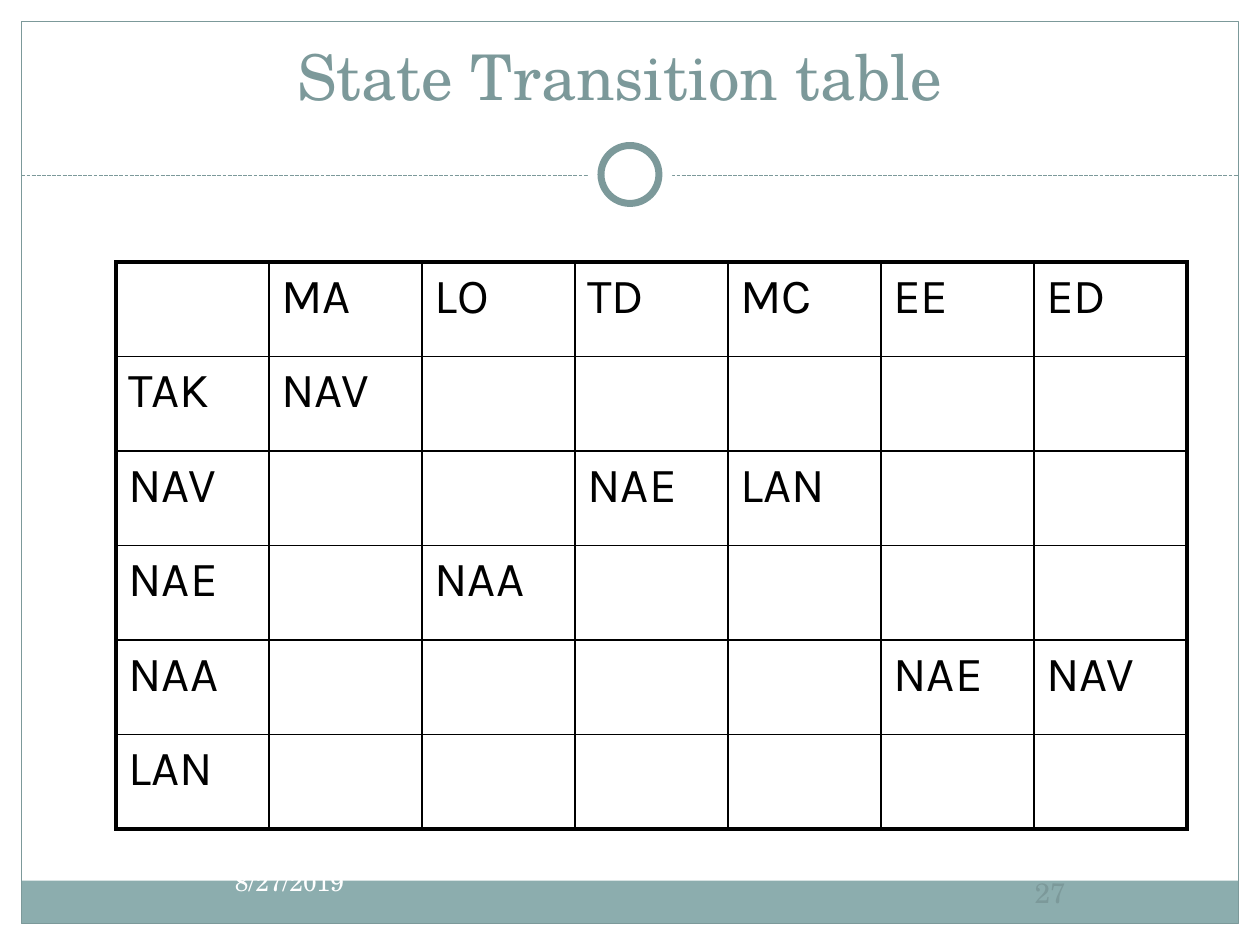
from lxml import etree
from pptx import Presentation
from pptx.dml.color import RGBColor
from pptx.enum.dml import MSO_LINE
from pptx.enum.shapes import MSO_CONNECTOR, MSO_SHAPE
from pptx.enum.text import MSO_ANCHOR, PP_ALIGN
from pptx.oxml.ns import qn
from pptx.util import Emu, Inches, Pt

RECTANGLE, OVAL = MSO_SHAPE.RECTANGLE, MSO_SHAPE.OVAL
STRAIGHT = MSO_CONNECTOR.STRAIGHT
DASHED = MSO_LINE.SQUARE_DOT
TOP, MIDDLE = MSO_ANCHOR.TOP, MSO_ANCHOR.MIDDLE
LEFT, CENTER, RIGHT = PP_ALIGN.LEFT, PP_ALIGN.CENTER, PP_ALIGN.RIGHT

WHITE = RGBColor(0xFF, 0xFF, 0xFF)
BLACK = RGBColor(0, 0, 0)
TEAL = RGBColor(0x7C, 0x99, 0x9A)
LIGHT_TEAL = RGBColor(0x8C, 0xAD, 0xAE)
SERIF = "TeX Gyre Schola"
SANS = "Karla"

EVENTS = ["MA", "LO", "TD", "MC", "EE", "ED"]
TRANSITIONS = {
    "TAK": {"MA": "NAV"},
    "NAV": {"TD": "NAE", "MC": "LAN"},
    "NAE": {"LO": "NAA"},
    "NAA": {"EE": "NAE", "ED": "NAV"},
    "LAN": {},
}


def write_text(frame, text, size, font=SERIF, color=TEAL, align=LEFT, before=0):
    para = frame.paragraphs[0]
    para.alignment = align
    para.space_before = Pt(before)
    span = para.add_run()
    span.text = text
    span.font.size = Pt(size)
    span.font.name = font
    span.font.color.rgb = color


def add_text_box(page, box, text, insets=(0.1, 0.05, 0.1, 0.05), anchor=TOP, **style):
    frame = page.shapes.add_textbox(*map(Inches, box)).text_frame
    frame.word_wrap = True
    frame.vertical_anchor = anchor
    (frame.margin_left, frame.margin_top,
     frame.margin_right, frame.margin_bottom) = map(Inches, insets)
    write_text(frame, text, **style)


def add_panel(page, box, kind=RECTANGLE, fill=None, line_width=0):
    panel = page.shapes.add_shape(kind, *map(Inches, box))
    panel.shadow.inherit = False
    if fill is None:
        panel.fill.background()
    else:
        panel.fill.solid()
        panel.fill.fore_color.rgb = fill
    if line_width:
        panel.line.color.rgb = TEAL
        panel.line.width = Pt(line_width)
    else:
        panel.line.fill.background()


def add_frame(page, box):
    left, top, width, height = box
    margin = 0.17
    inner_width = width - 2 * margin
    add_panel(page, (left, top, width, 1.52), fill=WHITE)
    for side in (left, left + width - margin):
        add_panel(page, (side, top, margin, height), fill=WHITE)
    add_panel(page, (left + margin, top + 6.99, inner_width, 0.34), fill=LIGHT_TEAL)
    add_panel(page, (left + margin, top + margin, inner_width, height - 2 * margin),
              line_width=0.75)


def add_divider(page, box):
    left, top, width, height = box
    middle = top + height / 2
    rule = page.shapes.add_connector(
        STRAIGHT, *map(Inches, (left, middle + 0.01, left + width, middle + 0.01)))
    rule.line.color.rgb = TEAL
    rule.line.width = Pt(0.75)
    rule.line.dash_style = DASHED
    etree.SubElement(rule._element.spPr, qn("a:effectLst"))
    for diameter, line_width in ((height, 0), (0.46, 4)):
        add_panel(page, (left + (width - diameter) / 2, middle - diameter / 2,
                         diameter, diameter), OVAL, WHITE, line_width)


def set_borders(cell, widths):
    properties = cell._tc.get_or_add_tcPr()
    for side, width in widths.items():
        line = etree.SubElement(properties, qn(f"a:ln{side}"), w=str(Pt(width)))
        fill = etree.SubElement(line, qn("a:solidFill"))
        etree.SubElement(fill, qn("a:srgbClr"), val=str(BLACK))


def add_transition_table(page, box):
    grid = [["", *EVENTS]]
    for state, targets in TRANSITIONS.items():
        grid.append([state, *(targets.get(event, "") for event in EVENTS)])
    row_count, column_count = len(grid), len(grid[0])
    left, top, width, height = map(Inches, box)
    table = page.shapes.add_table(row_count, column_count, left, top, width, height).table
    table.first_row = table.horz_banding = False
    for column in table.columns:
        column.width = Emu(width // column_count)
    for row in table.rows:
        row.height = Emu(height // row_count)
    for row_index, words in enumerate(grid):
        for column_index, word in enumerate(words):
            cell = table.cell(row_index, column_index)
            outer = {"L": column_index == 0, "R": column_index == column_count - 1,
                     "T": row_index == 0, "B": row_index == row_count - 1}
            set_borders(cell, {side: 2.25 if edge else 1 for side, edge in outer.items()})
            cell.fill.background()
            if word:
                write_text(cell.text_frame, word, 28, font=SANS, color=BLACK, before=5.6)


def add_footer(page, box):
    left, top, width, height = box
    field = 2.33
    add_text_box(page, (left, top, field, height), "8/27/2019",
                 size=14, color=WHITE, align=RIGHT)
    add_text_box(page, (left + width - field, top, field, height), "27",
                 insets=(0.05,) * 4, anchor=MIDDLE, size=16, align=CENTER)


def main():
    deck = Presentation()
    deck.slide_width, deck.slide_height = Inches(10), Inches(7.5)
    page = deck.slides.add_slide(deck.slide_layouts[6])
    add_frame(page, (0, 0, 10, 7.5))
    add_divider(page, (0.17, 1.05, 9.66, 0.67))
    add_text_box(page, (0.5, 0.3, 9, 1.25), "State Transition table",
                 insets=(0.1, 0, 0.26, 0.05), size=36, align=CENTER)
    add_transition_table(page, (0.92, 2.08, 8.5, 4.5))
    add_footer(page, (0.5, 6.83, 9, 0.5))
    deck.save("out.pptx")


if __name__ == "__main__":
    main()
